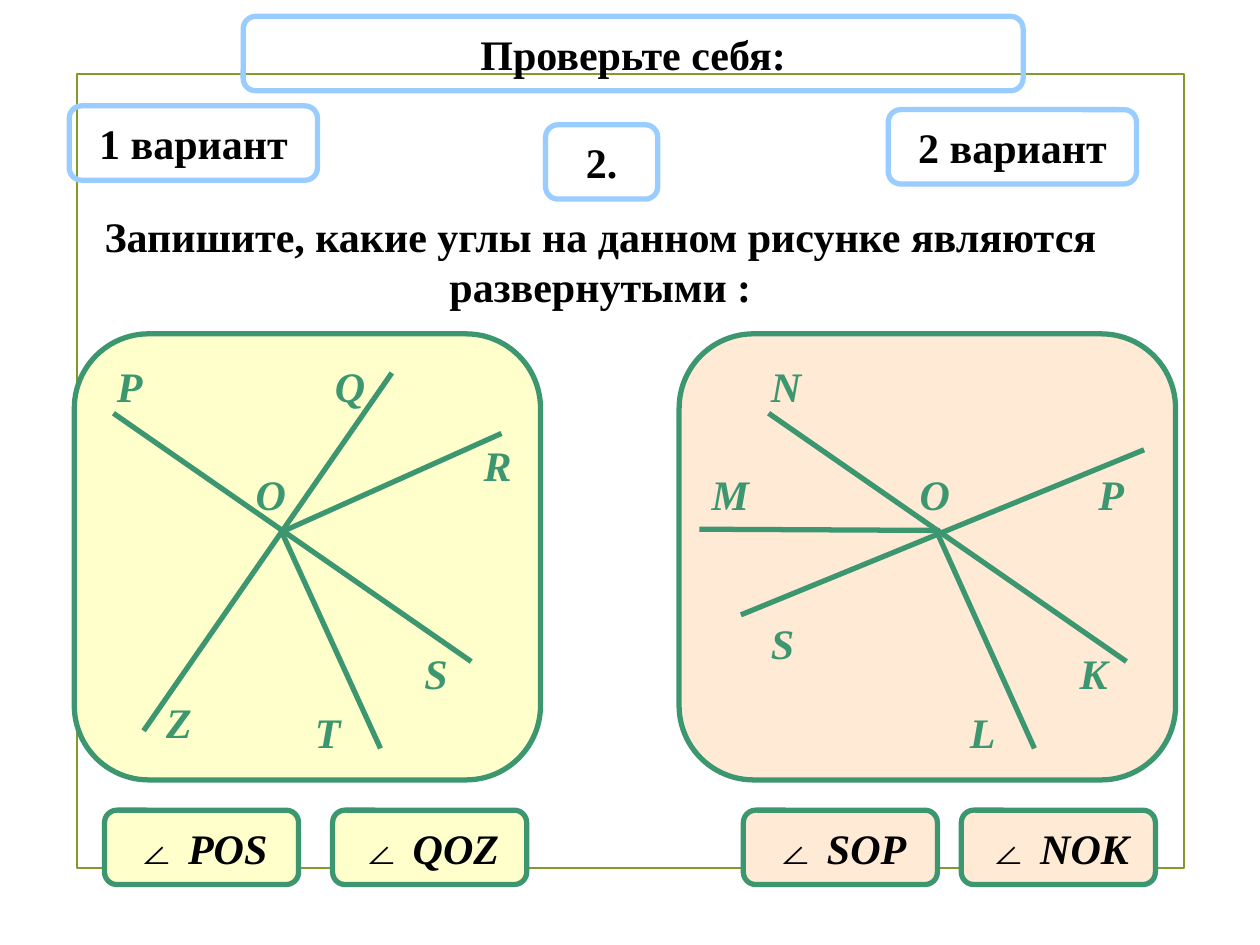
from pptx import Presentation
from pptx import util as u
from pptx.dml.color import RGBColor
from pptx.enum import shapes, text
from pptx.oxml.ns import qn
from lxml import etree

BLACK = RGBColor(0x00, 0x00, 0x00)
OLIVE = RGBColor(0x83, 0x99, 0x2A)
BLUE = RGBColor(0x99, 0xCC, 0xFF)
GREEN = RGBColor(0x3C, 0x97, 0x70)
YELLOW = RGBColor(0xFF, 0xFF, 0xCC)
PEACH = RGBColor(0xFF, 0xEA, 0xD5)

SHAPE = shapes.MSO_SHAPE
BAR_HEIGHT = 0.59
LETTER_WIDTH = 0.63


class Canvas:
    """Holds the slide and the style shared by its elements."""

    font = "Times New Roman"
    size = u.Pt(24)
    weight = u.Pt(3)

    def __init__(self, slide):
        self.slide = slide

    def add_runs(self, tf, runs, color=BLACK, align=text.PP_ALIGN.CENTER):
        """Fill a text frame with bold runs given as (words, italic)."""
        tf.word_wrap = True
        p = tf.paragraphs[0]
        p.alignment = align
        for words, italic in runs:
            r = p.add_run()
            r.text = words
            r.font.name = self.font
            r.font.size = self.size
            r.font.bold = True
            r.font.italic = italic
            r.font.color.rgb = color

    def box(self, at, line, fill=None, runs=(), kind=SHAPE.ROUNDED_RECTANGLE, weight=None):
        sp = self.slide.shapes.add_shape(kind, *map(u.Inches, at))
        sp.shadow.inherit = False
        if fill is None:
            sp.fill.background()
        else:
            sp.fill.solid()
            sp.fill.fore_color.rgb = fill
        sp.line.color.rgb = line
        sp.line.width = weight or self.weight
        if runs:
            self.add_runs(sp.text_frame, runs)

    def label(self, at, words, italic=False, color=BLACK, align=text.PP_ALIGN.CENTER):
        sp = self.slide.shapes.add_textbox(*map(u.Inches, at))
        self.add_runs(sp.text_frame, [(words, italic)], color, align)

    def letter(self, name, left, top, width=LETTER_WIDTH):
        self.label((left, top, width, 0.5), name, True, GREEN, text.PP_ALIGN.LEFT)

    def ray(self, *ends):
        c = self.slide.shapes.add_connector(
            shapes.MSO_CONNECTOR.STRAIGHT, *map(u.Inches, ends))
        c.line.color.rgb = GREEN
        c.line.width = self.weight
        etree.SubElement(c._element.spPr, qn("a:effectLst"))

    def figure(self, panel, fill, rays, letters, answers):
        """Draw one variant: panel, rays, point letters and answer bars."""
        self.box(panel, GREEN, fill)
        for ends in rays:
            self.ray(*ends)
        for letter in letters:
            self.letter(*letter)
        for left, name in answers:
            self.box((left, 6.43, 1.54, BAR_HEIGHT), GREEN, fill,
                     [("∠ ", False), (name, True)])


def main():
    prs = Presentation()
    prs.slide_width, prs.slide_height = u.Inches(10), u.Inches(7.5)
    s = Canvas(prs.slides.add_slide(prs.slide_layouts[6]))

    s.box((0.61, 0.59, 8.79, 6.3), OLIVE, kind=SHAPE.RECTANGLE, weight=u.Pt(1.25))
    headings = [
        (1.93, 0.13, 6.19, "Проверьте себя:"),
        (0.55, 0.84, 1.97, "1 вариант"),
        (7.05, 0.87, 1.97, "2 вариант"),
        (4.33, 0.99, 0.89, "2."),
    ]
    for left, top, width, words in headings:
        s.box((left, top, width, BAR_HEIGHT), BLUE, runs=[(words, False)])
    s.label((0.59, 1.62, 8.35, 0.9),
            "Запишите, какие углы на данном рисунке являются развернутыми :")

    s.figure(
        (0.59, 2.65, 3.7, 3.54), YELLOW,
        rays=[(0.9, 3.28, 3.74, 5.25), (3.11, 2.96, 1.14, 5.8),
              (2.24, 4.22, 3.98, 3.44), (3.02, 5.94, 2.23, 4.21)],
        letters=[("O", 1.93, 3.67, 0.24), ("P", 0.83, 2.81), ("Q", 2.56, 2.81),
                 ("R", 3.74, 3.44), ("S", 3.27, 5.09), ("T", 2.4, 5.56),
                 ("Z", 1.22, 5.48)],
        answers=[(0.83, "POS"), (2.64, "QOZ")])
    s.figure(
        (5.39, 2.65, 3.94, 3.54), PEACH,
        rays=[(6.1, 3.28, 8.94, 5.25), (9.08, 3.57, 5.88, 4.88),
              (8.21, 5.94, 7.43, 4.21), (7.46, 4.21, 5.55, 4.2)],
        letters=[("O", 7.2, 3.67, 0.24), ("N", 6.02, 2.81), ("M", 5.55, 3.67),
                 ("P", 8.62, 3.67), ("K", 8.47, 5.09), ("L", 7.6, 5.56),
                 ("S", 6.02, 4.85)],
        answers=[(5.9, "SOP"), (7.63, "NOK")])

    prs.save("out.pptx")


if __name__ == "__main__":
    main()
